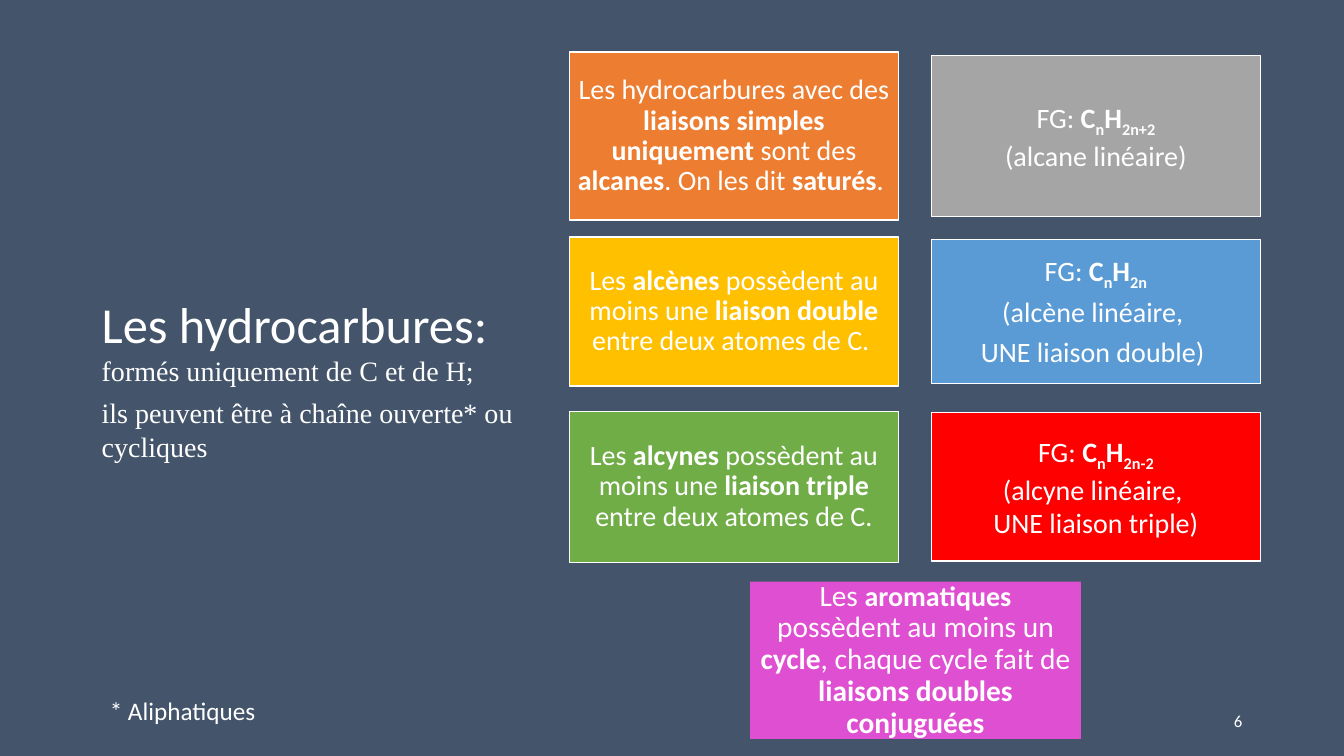
from dataclasses import dataclass
from typing import NamedTuple

from pptx import Presentation
from pptx.dml.color import RGBColor
from pptx.enum.shapes import MSO_SHAPE
from pptx.enum.text import MSO_ANCHOR, PP_ALIGN
from pptx.util import Inches, Pt

RECT = MSO_SHAPE.RECTANGLE
TOP, MIDDLE = MSO_ANCHOR.TOP, MSO_ANCHOR.MIDDLE
LEFT, CENTER, RIGHT = PP_ALIGN.LEFT, PP_ALIGN.CENTER, PP_ALIGN.RIGHT

SLATE = RGBColor(0x44, 0x54, 0x6A)
WHITE = RGBColor(0xFF, 0xFF, 0xFF)
ORANGE = RGBColor(0xED, 0x7D, 0x31)
GREY = RGBColor(0xA5, 0xA5, 0xA5)
GOLD = RGBColor(0xFF, 0xC0, 0x00)
BLUE = RGBColor(0x5B, 0x9B, 0xD5)
GREEN = RGBColor(0x70, 0xAD, 0x47)
RED = RGBColor(0xFF, 0x00, 0x00)
PINK = RGBColor(0xDF, 0x4F, 0xD1)

SANS, SERIF = "Calibri", "Times New Roman"

# Grid of cards, in inches: left edges, width, centre of first row, row step
COLS = (5.65, 9.24)
CARD_W = 3.26
ROW_MID, ROW_STEP = 1.35, 1.74


class Run(NamedTuple):
    text: str
    size: float = 20
    bold: bool = False
    sub: bool = False
    face: str = SANS


class Box(NamedTuple):
    left: float
    top: float
    width: float
    height: float


class Flow(NamedTuple):
    align: PP_ALIGN = LEFT
    anchor: MSO_ANCHOR = TOP
    after: float = 0
    line: float = 1.0
    pad: tuple[float, float] = (0.1, 0.05)


@dataclass
class Card:
    col: int
    row: int
    height: float
    fill: RGBColor
    lines: list[str]
    flow: Flow


TIGHT = Flow(CENTER, MIDDLE, 7, 0.9, (0.08, 0.08))
LOOSE = Flow(CENTER, MIDDLE, pad=(0.08, 0.08))

CARDS = [
    Card(0, 0, 1.67, ORANGE,
         ["Les hydrocarbures avec des |liaisons simples uniquement |sont des "
          "|alcanes|. On les dit |saturés|. "], TIGHT),
    Card(1, 0, 1.6, GREY,
         ["FG: |C~n~H~2n+2~|", "(alcane linéaire)"], LOOSE),
    Card(0, 1, 1.48, GOLD,
         ["Les |alcènes |possèdent au moins une| liaison double "
          "|entre deux atomes de C. "], TIGHT),
    Card(1, 1, 1.43, BLUE,
         ["FG: |C~n~H~2n~|", "(alcène linéaire, ", "UNE liaison double) "],
         TIGHT),
    Card(0, 2, 1.5, GREEN,
         ["Les |alcynes |possèdent au moins une| liaison triple "
          "|entre deux atomes de C."], TIGHT),
    Card(1, 2, 1.47, RED,
         ["FG: |C~n~H~2n-2~|", "(alcyne linéaire, ", "UNE liaison triple)"],
         LOOSE),
]


def parse(line: str) -> list[Run]:
    """Split a line into runs: | switches bold, ~ switches subscript."""
    return [Run(text, bold=i % 2 == 1, sub=j % 2 == 1)
            for i, part in enumerate(line.split("|"))
            for j, text in enumerate(part.split("~")) if text]


def write(shape, paras: list[list[Run]], flow: Flow) -> None:
    frame = shape.text_frame
    side, edge = map(Inches, flow.pad)
    form = {"word_wrap": True, "vertical_anchor": flow.anchor,
            "margin_left": side, "margin_right": side,
            "margin_top": edge, "margin_bottom": edge}
    for name, value in form.items():
        setattr(frame, name, value)
    for i, runs in enumerate(paras):
        para = frame.add_paragraph() if i else frame.paragraphs[0]
        form = {"alignment": flow.align, "line_spacing": flow.line,
                "space_after": Pt(flow.after)}
        for name, value in form.items():
            setattr(para, name, value)
        for run in runs:
            piece = para.add_run()
            piece.text = run.text
            form = {"name": run.face, "size": Pt(run.size), "bold": run.bold}
            for name, value in form.items():
                setattr(piece.font, name, value)
            piece.font.color.rgb = WHITE
            if run.sub:
                piece._r.get_or_add_rPr().set("baseline", "-25000")


def label(slide, box: Box, paras: list[list[Run]], flow: Flow) -> None:
    write(slide.shapes.add_textbox(*map(Inches, box)), paras, flow)


def block(slide, box: Box, fill: RGBColor, paras: list[list[Run]],
          flow: Flow, edge: bool = True) -> None:
    shape = slide.shapes.add_shape(RECT, *map(Inches, box))
    shape.shadow.inherit = False
    shape.fill.solid()
    shape.fill.fore_color.rgb = fill
    if edge:
        shape.line.color.rgb = WHITE
        shape.line.width = Pt(1)
    else:
        shape.line.fill.background()
    write(shape, paras, flow)


def main() -> None:
    deck = Presentation()
    deck.slide_width, deck.slide_height = Inches(13.33), Inches(7.5)
    slide = deck.slides.add_slide(deck.slide_layouts[6])
    slide.background.fill.solid()
    slide.background.fill.fore_color.rgb = SLATE

    # Slide number
    label(slide, Box(9.42, 6.95, 3, 0.4), [[Run("6", 12)]],
          Flow(RIGHT, MIDDLE, 6))

    # Families and their general formulas
    for card in CARDS:
        top = ROW_MID + card.row * ROW_STEP - card.height / 2
        block(slide, Box(COLS[card.col], top, CARD_W, card.height),
              card.fill, [parse(line) for line in card.lines], card.flow)

    # Title and footnote
    label(slide, Box(0.91, 2.86, 4.28, 2.49), [
        [Run("Les hydrocarbures: ", 36),
         Run("formés uniquement de C et de H;", face=SERIF)],
        [Run("ils peuvent être à chaîne ouverte* ou cycliques", face=SERIF)],
    ], Flow(after=6))
    label(slide, Box(0.99, 6.85, 3.08, 0.4), [[Run("* Aliphatiques", 18)]],
          Flow())

    # Aromatics
    block(slide, Box(7.44, 5.77, 3.28, 1.56), PINK, [[
        Run("Les ", 21), Run("aromatiques", 20, True),
        Run(" possèdent au moins un ", 21), Run("cycle", 21, True),
        Run(", chaque cycle fait de ", 21),
        Run("liaisons doubles conjuguées", 21, True),
    ]], TIGHT._replace(pad=(0.09, 0.09)), edge=False)

    deck.save("out.pptx")


if __name__ == "__main__":
    main()
